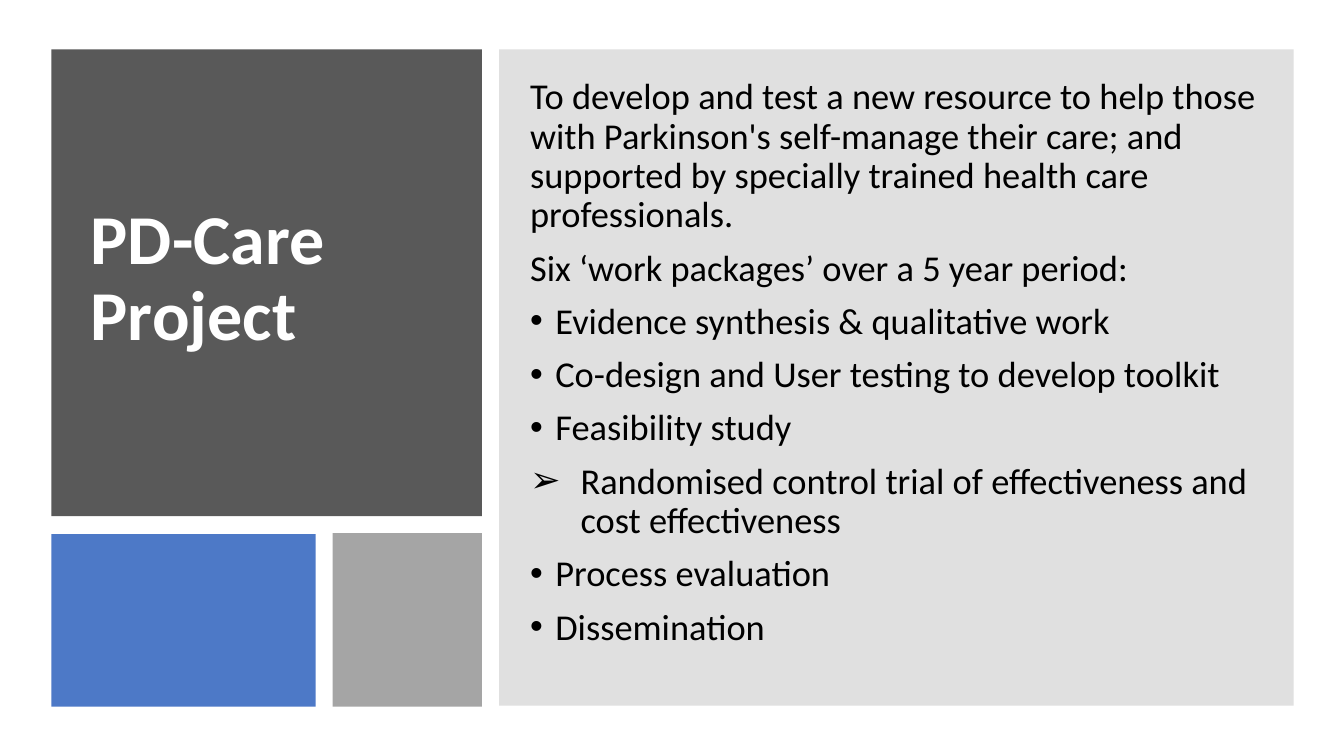
from lxml.etree import SubElement
from pptx import Presentation
from pptx.dml.color import RGBColor
from pptx.enum.shapes import MSO_SHAPE
from pptx.enum.text import MSO_ANCHOR, MSO_AUTO_SIZE, PP_ALIGN
from pptx.oxml.ns import qn
from pptx.util import Inches, Pt

WHITE = RGBColor(0xFF, 0xFF, 0xFF)
BLACK = RGBColor(0, 0, 0)
DARK = RGBColor(0x59, 0x59, 0x59)
BLUE = RGBColor(0x44, 0x72, 0xC4)
MID = RGBColor(0x7F, 0x7F, 0x7F)
GREY = RGBColor(0xA5, 0xA5, 0xA5)
FONT = "Calibri"

TITLE = "PD-Care Project"
PANELS = [
    ((0.51, 0.49, 4.27, 4.63), DARK, 100),
    ((0.51, 5.3, 2.62, 1.71), BLUE, 95),
    ((4.95, 0.49, 7.88, 6.51), MID, 24),
    ((3.3, 5.29, 1.48, 1.72), GREY, 100),
]
LINES = [
    ("", "To develop and test a new resource to help those with Parkinson's "
         "self-manage their care; and supported by specially trained health "
         "care professionals."),
    ("", "Six ‘work packages’ over a 5 year period:"),
    ("•", "Evidence synthesis & qualitative work"),
    ("•", "Co-design and User testing to develop toolkit"),
    ("•", "Feasibility study"),
    ("➢", "Randomised control trial of effectiveness and cost effectiveness"),
    ("•", "Process evaluation"),
    ("•", "Dissemination"),
]
INDENT = {"•": 0.25, "➢": 0.5}


def add_panel(slide, box, color, alpha):
    panel = slide.shapes.add_shape(MSO_SHAPE.RECTANGLE, *map(Inches, box))
    panel.shadow.inherit = False
    panel.line.fill.background()
    panel.fill.solid()
    panel.fill.fore_color.rgb = color
    if alpha < 100:
        tone = panel.fill._xPr.find(".//" + qn("a:srgbClr"))
        SubElement(tone, qn("a:alpha"), val=str(alpha * 1000))


def style(para, size, color, bold=False):
    para.line_spacing = 0.9
    para.alignment = PP_ALIGN.LEFT
    para.font.name = FONT
    para.font.size = Pt(size)
    para.font.color.rgb = color
    para.font.bold = bold


def add_mark(para, mark):
    props = para._p.get_or_add_pPr()
    indent = Inches(INDENT[mark])
    props.set("marL", str(indent))
    props.set("indent", str(-indent))
    face = SubElement(props, qn("a:buFont"), typeface="Arial")
    SubElement(props, qn("a:buChar"), char=mark)
    props.remove(face)
    props.insert(len(props) - 1, face)


def set_title(slide):
    title = slide.shapes.title
    title.left, title.top = Inches(0.8), Inches(1.22)
    title.width, title.height = Inches(3.68), Inches(3.11)
    frame = title.text_frame
    frame.text = TITLE
    frame.word_wrap = True
    frame.auto_size = MSO_AUTO_SIZE.NONE
    frame.vertical_anchor = MSO_ANCHOR.MIDDLE
    para = frame.paragraphs[0]
    para.space_after = Pt(6)
    style(para, 50, WHITE, True)
    slide.shapes._spTree.append(title._element)


def add_body(slide):
    box = slide.shapes.add_textbox(*map(Inches, (5.16, 0.73, 7.43, 6.03)))
    frame = box.text_frame
    frame.word_wrap = True
    for i, (mark, text) in enumerate(LINES):
        para = frame.add_paragraph() if i else frame.paragraphs[0]
        para.text = text
        para.space_before = Pt(10)
        style(para, 26, BLACK)
        if mark:
            add_mark(para, mark)
            order = para._p.pPr
            order.append(order.find(qn("a:defRPr")))


def main():
    deck = Presentation()
    deck.slide_width, deck.slide_height = Inches(13.33), Inches(7.5)
    slide = deck.slides.add_slide(deck.slide_layouts[5])
    for panel in PANELS:
        add_panel(slide, *panel)
    set_title(slide)
    add_body(slide)
    deck.save("out.pptx")


if __name__ == "__main__":
    main()
